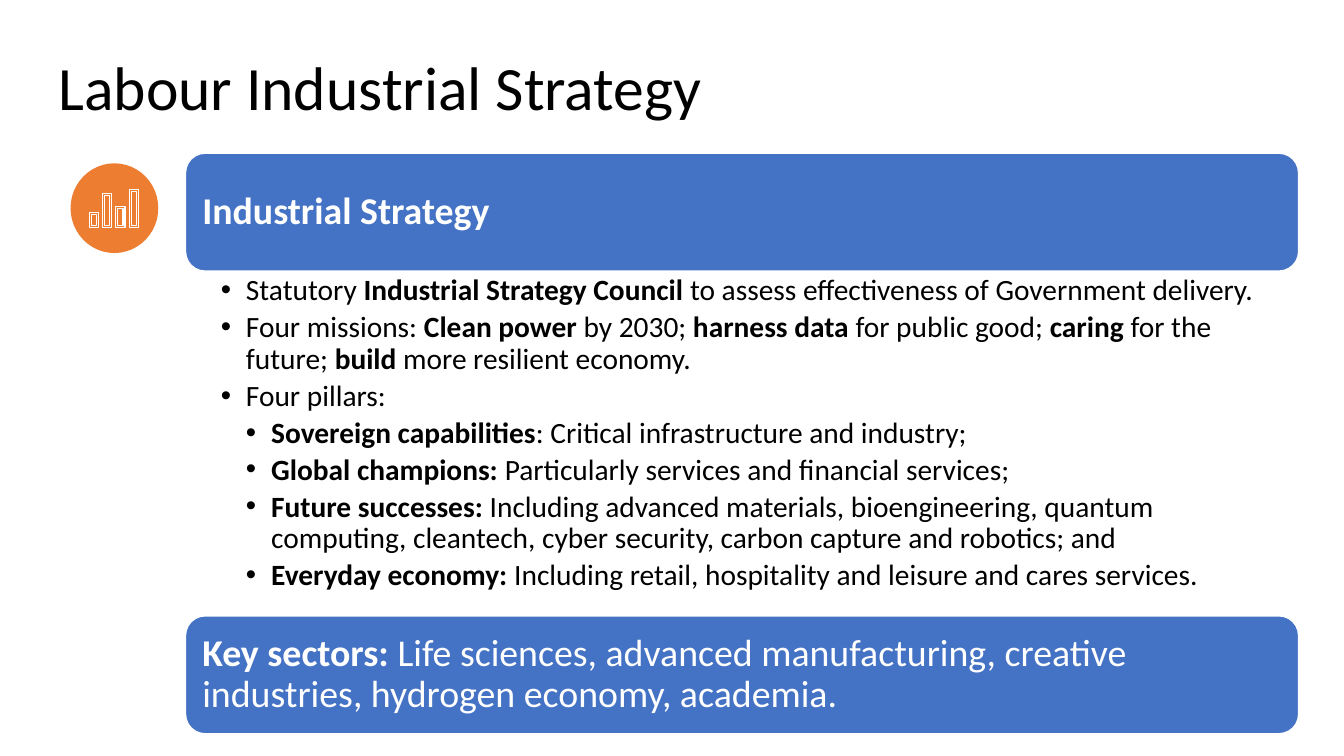
import pptx
import pptx.dml.color
import pptx.enum.shapes
import pptx.enum.text
import pptx.oxml.ns
import pptx.util
import lxml.etree

Inches = pptx.util.Inches
Pt = pptx.util.Pt
SHAPES = pptx.enum.shapes.MSO_SHAPE
ANCHORS = pptx.enum.text.MSO_ANCHOR

COLOURS = {
    "black": "000000",
    "white": "FFFFFF",
    "blue": "4472C4",
    "orange": "ED7D31",
}

BULLETS = [
    (1, [("Statutory ", False), ("Industrial Strategy Council ", True),
         ("to assess effectiveness of Government delivery.", False)]),
    (1, [("Four missions: ", False), ("Clean power ", True), ("by 2030; ", False),
         ("harness data ", True), ("for public good; ", False), ("caring", True),
         (" for the future; ", False), ("build", True),
         (" more resilient economy.", False)]),
    (1, [("Four pillars:", False)]),
    (2, [("Sovereign capabilities", True),
         (": Critical infrastructure and industry;", False)]),
    (2, [("Global champions: ", True),
         ("Particularly services and financial services;", False)]),
    (2, [("Future successes: ", True),
         ("Including advanced materials, bioengineering, quantum computing, "
          "cleantech, cyber security, carbon capture and robotics; and", False)]),
    (2, [("Everyday economy: ", True),
         ("Including retail, hospitality and leisure and cares services.", False)]),
]

BANNERS = [
    (1.52, [("Industrial Strategy", True)]),
    (6.11, [("Key sectors:", True),
            (" Life sciences, advanced manufacturing, creative industries, "
             "hydrogen economy, academia.", False)]),
]


def colour(name):
    return pptx.dml.color.RGBColor.from_string(COLOURS[name])


def apply_format(target, values):
    for name, value in values.items():
        setattr(target, name, value)


class SlideBuilder:
    font_name = "Calibri"
    line_spacing = 0.9
    bullet_indent = 0.25

    def __init__(self, slide):
        self.slide = slide

    def paint(self, shape, fill, line=None, line_width=1):
        shape.shadow.inherit = False
        shape.fill.solid()
        shape.fill.fore_color.rgb = colour(fill)
        if line:
            shape.line.color.rgb = colour(line)
            shape.line.width = Pt(line_width)
        else:
            shape.line.fill.background()

    def fill_text(self, shape, paragraphs, size, font_colour, anchor, insets, space_after=0):
        frame = shape.text_frame
        sides = ("margin_left", "margin_top", "margin_right", "margin_bottom")
        apply_format(frame, {"word_wrap": True, "vertical_anchor": anchor})
        apply_format(frame, dict(zip(sides, map(Inches, insets))))
        for index, (level, runs) in enumerate(paragraphs):
            paragraph = frame.paragraphs[0] if index == 0 else frame.add_paragraph()
            apply_format(paragraph, {
                "alignment": pptx.enum.text.PP_ALIGN.LEFT,
                "level": level,
                "line_spacing": self.line_spacing,
                "space_before": Pt(0),
                "space_after": Pt(space_after),
            })
            for text, bold in runs:
                run = paragraph.add_run()
                run.text = text
                apply_format(run.font, {"name": self.font_name, "size": Pt(size), "bold": bold})
                run.font.color.rgb = colour(font_colour)
            if level:
                self.add_bullet(paragraph, level)

    def add_bullet(self, paragraph, level):
        properties = paragraph._p.get_or_add_pPr()
        properties.set("marL", str(Inches(self.bullet_indent * level)))
        properties.set("indent", str(-Inches(self.bullet_indent)))
        for tag, attribute, value in (("a:buFont", "typeface", "Arial"), ("a:buChar", "char", "•")):
            element = lxml.etree.SubElement(properties, pptx.oxml.ns.qn(tag))
            element.set(attribute, value)

    def add_text(self, box, paragraphs, **style):
        shape = self.slide.shapes.add_textbox(*map(Inches, box))
        self.fill_text(shape, paragraphs, **style)

    def add_circle(self, box, fill):
        shape = self.slide.shapes.add_shape(SHAPES.OVAL, *map(Inches, box))
        self.paint(shape, fill)

    def add_banner(self, top, runs):
        box = map(Inches, (1.84, top, 11.04, 1.17))
        shape = self.slide.shapes.add_shape(SHAPES.ROUNDED_RECTANGLE, *box)
        self.paint(shape, "blue", "white")
        self.fill_text(shape, [(0, runs)], 27, "white", ANCHORS.MIDDLE, [0.11] * 4)

    def add_bar_icon(self, left, bottom, tops, bar_width, pitch, wall):
        builder = None
        for index, top in enumerate(tops):
            bar_left = left + index * pitch
            for inset in (0, wall):
                x1, x2 = Inches(bar_left + inset), Inches(bar_left + bar_width - inset)
                y1, y2 = Inches(top + inset), Inches(bottom - inset)
                if builder is None:
                    builder = self.slide.shapes.build_freeform(x1, y1)
                else:
                    builder.move_to(x1, y1)
                builder.add_line_segments([(x2, y1), (x2, y2), (x1, y2)], close=True)
        self.paint(builder.convert_to_shape(), "orange", "white", 0.75)


def main():
    presentation = pptx.Presentation()
    presentation.slide_width = Inches(13.33)
    presentation.slide_height = Inches(7.5)
    builder = SlideBuilder(presentation.slides.add_slide(presentation.slide_layouts[6]))

    builder.add_text((0.48, 0.4, 12.27, 1), [(0, [("Labour Industrial Strategy", False)])],
                     size=44, font_colour="black", anchor=ANCHORS.MIDDLE,
                     insets=(0.1, 0.05, 0.1, 0.05))
    builder.add_circle((0.7, 1.62, 0.87, 0.89), "orange")
    builder.add_bar_icon(left=0.89, bottom=2.26, tops=(2.11, 1.92, 2.05, 1.88),
                         bar_width=0.09, pitch=0.13, wall=0.02)
    for top, runs in BANNERS:
        builder.add_banner(top, runs)
    builder.add_text((1.84, 2.69, 11.04, 3.42), BULLETS,
                     size=21, font_colour="black", anchor=ANCHORS.TOP,
                     insets=(0.35, 0.04, 0.21, 0.04), space_after=3.7)
    presentation.save("out.pptx")


if __name__ == "__main__":
    main()
